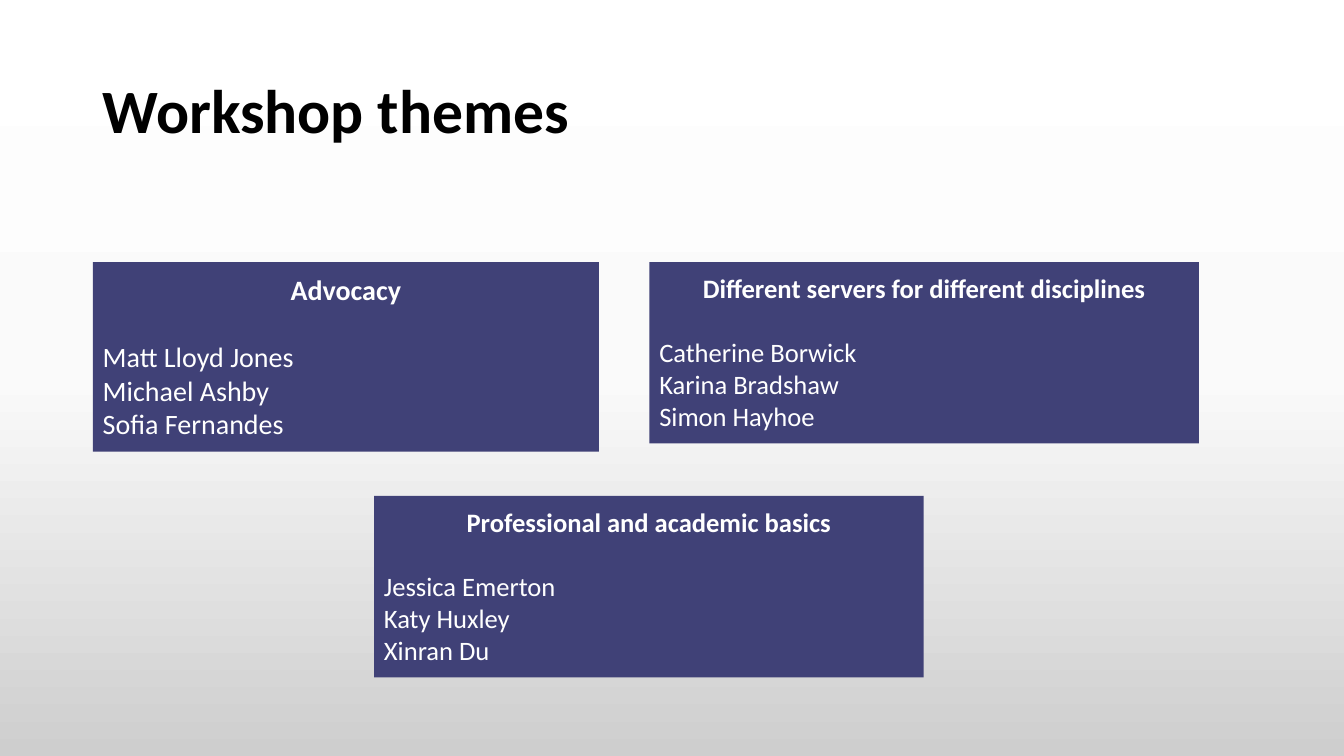
from copy import deepcopy

from pptx import Presentation
from pptx.dml.color import RGBColor
from pptx.enum.shapes import MSO_SHAPE
from pptx.enum.text import MSO_ANCHOR, MSO_AUTO_SIZE, PP_ALIGN
from pptx.util import Inches, Pt

WHITE = RGBColor(0xFF, 0xFF, 0xFF)
PALE = RGBColor(0xFA, 0xFA, 0xFA)
GREY = RGBColor(0xCE, 0xCE, 0xCE)
BLACK = RGBColor(0, 0, 0)
INDIGO = RGBColor(0x40, 0x41, 0x77)


class ThemeSlide:
    font = "Calibri"
    line_height = 1.2

    def __init__(self, prs):
        self.s = prs.slides.add_slide(prs.slide_layouts[6])

    def background(self, colours):
        """Spread the colours evenly from top to bottom."""
        fill = self.s.background.fill
        fill.gradient()
        fill.gradient_angle = 270
        stops = self.s.background._cSld.xpath(".//a:gsLst")[0]
        while len(stops) < len(colours):
            stops.append(deepcopy(stops[0]))
        for i, (stop, colour) in enumerate(zip(fill.gradient_stops, colours)):
            stop.color.rgb = colour
            stop.position = i / (len(colours) - 1)

    def run(self, p, text, size, colour, bold=False):
        r = p.add_run()
        r.text = text
        r.font.name = self.font
        r.font.size = Pt(size)
        r.font.bold = bold
        r.font.color.rgb = colour

    def title(self, text, left, top, width, height):
        sp = self.s.shapes.add_textbox(
            Inches(left), Inches(top), Inches(width), Inches(height))
        tf = sp.text_frame
        tf.word_wrap = True
        tf.vertical_anchor = MSO_ANCHOR.MIDDLE
        p = tf.paragraphs[0]
        p.line_spacing = 0.9
        self.run(p, text, 44, BLACK, bold=True)

    def theme(self, heading, names, left, top, width, height, size):
        sp = self.s.shapes.add_shape(
            MSO_SHAPE.RECTANGLE,
            Inches(left), Inches(top), Inches(width), Inches(height))
        sp.shadow.inherit = False
        sp.fill.solid()
        sp.fill.fore_color.rgb = INDIGO
        sp.line.fill.background()
        tf = sp.text_frame
        tf.word_wrap = True
        tf.auto_size = MSO_AUTO_SIZE.SHAPE_TO_FIT_TEXT
        tf.vertical_anchor = MSO_ANCHOR.TOP
        tf.margin_left = tf.margin_right = Inches(0.1)
        tf.margin_top = tf.margin_bottom = Inches(0.1)
        # Heading, with one line of space below it
        p = tf.paragraphs[0]
        p.alignment = PP_ALIGN.CENTER
        p.space_after = Pt(size * self.line_height)
        self.run(p, heading, size, WHITE, bold=True)
        # Group members
        for name in names:
            p = tf.add_paragraph()
            p.alignment = PP_ALIGN.LEFT
            self.run(p, name, size, WHITE)


def main():
    prs = Presentation()
    prs.slide_width, prs.slide_height = Inches(13.33), Inches(7.5)
    slide = ThemeSlide(prs)
    slide.background([WHITE, PALE, GREY])
    slide.title("Workshop themes", 0.92, 0.4, 9.71, 1.45)

    # Theme boxes
    slide.theme("Advocacy",
                ["Matt Lloyd Jones", "Michael Ashby", "Sofia Fernandes"],
                0.92, 2.6, 5.02, 1.88, size=20)
    slide.theme("Different servers for different disciplines",
                ["Catherine Borwick", "Karina Bradshaw", "Simon Hayhoe"],
                6.44, 2.6, 5.45, 1.8, size=19)
    slide.theme("Professional and academic basics",
                ["Jessica Emerton", "Katy Huxley", "Xinran Du"],
                3.71, 4.92, 5.45, 1.8, size=19)
    prs.save("out.pptx")


if __name__ == "__main__":
    main()
